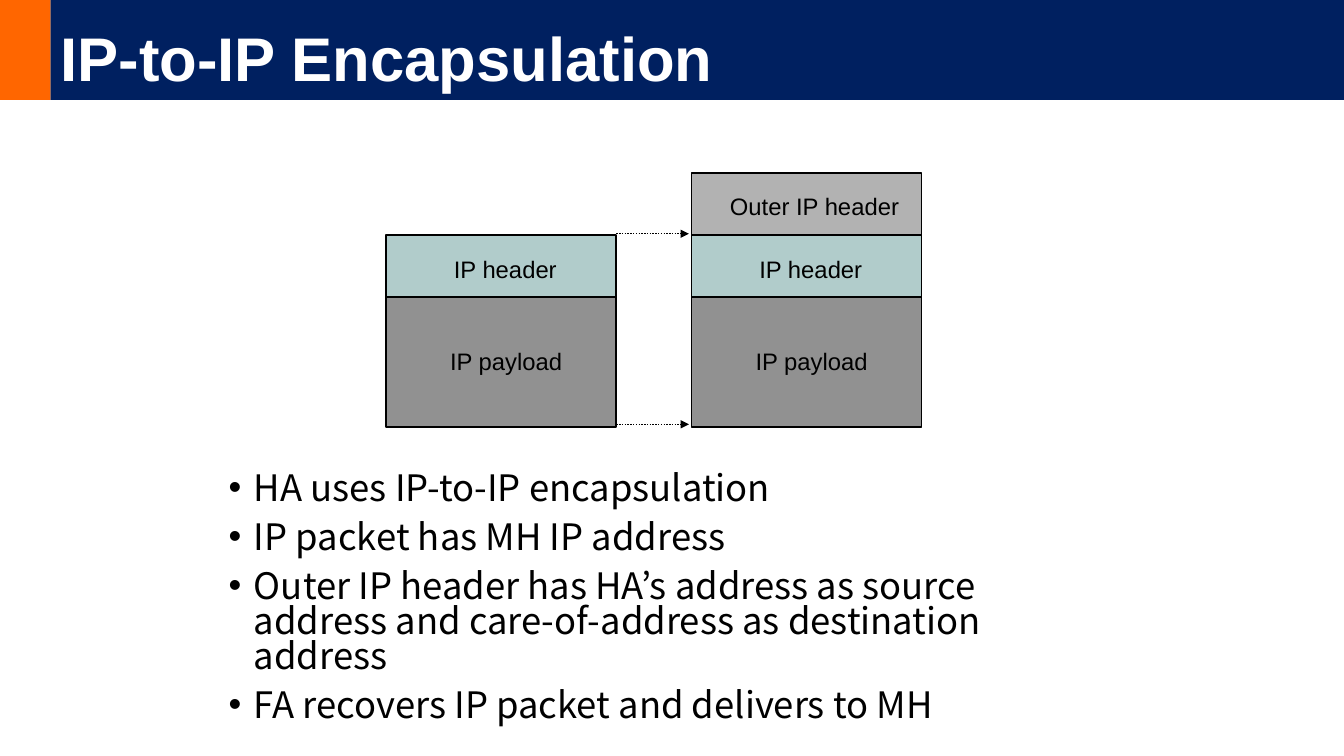
from pptx import Presentation
from pptx.dml.color import RGBColor as Rgb
from pptx.enum.dml import MSO_LINE as Dash
from pptx.enum.shapes import MSO_CONNECTOR as Conn, MSO_SHAPE as Kind
from pptx.enum.text import MSO_ANCHOR as Anchor, MSO_AUTO_SIZE as Fit, PP_ALIGN as Align
from pptx.oxml.ns import qn
from pptx.util import Pt
from lxml.etree import SubElement as Sub

HUES = {
    "orange": "FF6600", "navy": "002060", "white": "FFFFFF", "black": "000000",
    "teal": "B1CCCB", "light": "B2B2B2", "dark": "919191",
}
SANS, BODY = "Arial", "Noto Sans CJK KR"


class Deck:
    """Holds the style and the current slide; lengths are points."""

    def __init__(self, wide, high):
        self.prs = Presentation()
        self.prs.slide_width, self.prs.slide_height = Pt(wide), Pt(high)
        self.slide = self.prs.slides.add_slide(self.prs.slide_layouts[1])
        self.shapes = self.slide.shapes

    def hue(self, name):
        return Rgb.from_string(HUES[name])

    def paint(self, shape, name):
        shape.fill.solid()
        shape.fill.fore_color.rgb = self.hue(name)

    def place(self, shape, left, top, wide, high):
        shape.left, shape.top = Pt(left), Pt(top)
        shape.width, shape.height = Pt(wide), Pt(high)

    def style(self, para, size, face, name, bold=False):
        for run in para.runs:
            font = run.font
            font.size, font.name, font.bold = Pt(size), face, bold
            font.color.rgb = self.hue(name)

    def title(self, text, *area):
        shape = self.shapes.title
        self.place(shape, *area)
        self.paint(shape, "navy")
        frame = shape.text_frame
        frame.text = text
        frame.auto_size, frame.vertical_anchor = Fit.NONE, Anchor.BOTTOM
        para = frame.paragraphs[0]
        para.alignment, para.line_spacing = Align.LEFT, 0.9
        self.style(para, 44, SANS, "white", True)

    def items(self, lines, *area):
        shape = self.slide.placeholders[1]
        self.place(shape, *area)
        frame = shape.text_frame
        frame.text = "\n".join(lines)
        frame.auto_size = Fit.NONE
        for para in frame.paragraphs:
            para.line_spacing, para.space_before = 0.8, Pt(10)
            props = para._p.get_or_add_pPr()
            props.set("marL", str(Pt(18)))
            props.set("indent", str(-Pt(18)))
            self.style(para, 26, BODY, "black")

    def box(self, name, *area, edge=True):
        shape = self.shapes.add_shape(Kind.RECTANGLE, *map(Pt, area))
        shape.shadow.inherit = False
        self.paint(shape, name)
        if edge:
            shape.line.color.rgb = self.hue("black")
            shape.line.width = Pt(1.25)
        else:
            shape.line.fill.background()

    def label(self, text, *area):
        frame = self.shapes.add_textbox(*map(Pt, area)).text_frame
        frame.margin_left = frame.margin_right = 0
        frame.margin_top = frame.margin_bottom = 0
        frame.word_wrap, frame.auto_size = False, Fit.SHAPE_TO_FIT_TEXT
        frame.text = text
        self.style(frame.paragraphs[0], 17, SANS, "black")

    def arrow(self, left, top, wide):
        line = self.shapes.add_connector(
            Conn.STRAIGHT, Pt(left), Pt(top), Pt(left + wide), Pt(top))
        line.line.color.rgb = self.hue("black")
        line.line.width = Pt(1)
        line.line.dash_style = Dash.ROUND_DOT
        Sub(line.line._get_or_add_ln(), qn("a:tailEnd"), type="triangle")
        Sub(line._element.spPr, qn("a:effectLst"))


# text, fill, top, height, then label offset from the box and label width
OUTER = ("Outer IP header", "light", 123.8, 44.4, 27.4, 13, 122.4)
HEAD = ("IP header", "teal", 168, 44.4, 48.4, 14.2, 74.2)
LOAD = ("IP payload", "dark", 212.4, 92.9, 45.7, 35.3, 81.4)
PACKETS = {275.8: (HEAD, LOAD), 494: (OUTER, HEAD, LOAD)}
POINTS = (
    "HA uses IP-to-IP encapsulation",
    "IP packet has MH IP address",
    "Outer IP header has HA’s address as source address "
    "and care-of-address as destination address",
    "FA recovers IP packet and delivers to MH",
)


def main():
    deck = Deck(960, 540)
    deck.box("orange", 0, 0, 36, 71.3, edge=False)
    deck.title("IP-to-IP Encapsulation", 36, 0, 924, 71.3)
    deck.items(POINTS, 156.2, 334.8, 648, 193.7)
    for left, parts in PACKETS.items():
        for text, name, top, high, dx, dy, wide in parts:
            deck.box(name, left, top, 164.2, high)
            deck.label(text, left + dx, top + dy, wide, 20.9)
    for top in (167, 303.1):
        deck.arrow(440.3, top, 51.8)
    deck.prs.save("out.pptx")


if __name__ == "__main__":
    main()
